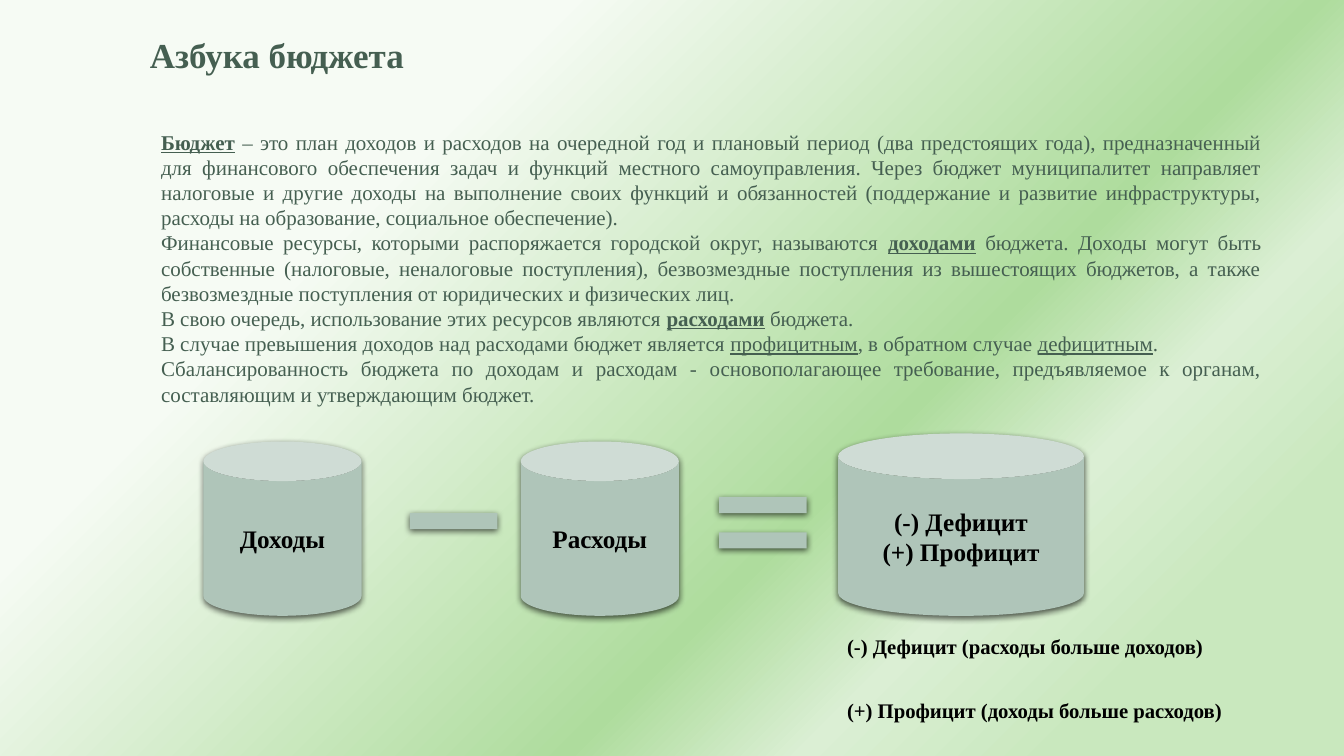
from lxml import etree
from pptx import Presentation
from pptx import util as u
from pptx.dml import color as c
from pptx.enum import shapes as s, text as t
from pptx.oxml import ns

Pt = u.Pt
HUES = {"ink": "455F51", "black": "000000", "can": "AFC5B9"}
STOPS = [(27, "F6FBF4"), (63, "AEDC9D"), (74, "DBEFD4"), (86, "C9E8BE")]
FONT = "Times New Roman"
# Each paragraph is a list of (words, style): b is bold, u is underlined
BODY = [
    [("Бюджет", "bu"),
     (" – это план доходов и расходов на очередной год и плановый период "
      "(два предстоящих года), предназначенный для финансового обеспечения "
      "задач и функций местного самоуправления. Через бюджет муниципалитет "
      "направляет налоговые и другие доходы на выполнение своих функций и "
      "обязанностей (поддержание и развитие инфраструктуры, расходы на "
      "образование, социальное обеспечение).", "")],
    [("Финансовые ресурсы, которыми распоряжается городской округ, "
      "называются ", ""), ("доходами", "bu"),
     (" бюджета. Доходы могут быть собственные (налоговые, неналоговые "
      "поступления), безвозмездные поступления из вышестоящих бюджетов, а "
      "также безвозмездные поступления от юридических и физических лиц.", "")],
    [("В свою очередь, использование этих ресурсов являются ", ""),
     ("расходами", "bu"), (" бюджета.", "")],
    [("В случае превышения доходов над расходами бюджет является ", ""),
     ("профицитным", "u"), (", в обратном случае ", ""),
     ("дефицитным", "u"), (".", "")],
    [("Сбалансированность бюджета по доходам и расходам - основополагающее "
      "требование, предъявляемое к органам, составляющим и утверждающим "
      "бюджет.", "")],
]


def style(font, size, hue, bold=None):
    font.name, font.size, font.bold = FONT, Pt(size), bold
    font.color.rgb = c.RGBColor.from_string(HUES[hue])


def frame(slide, box):
    tf = slide.shapes.add_textbox(*map(Pt, box)).text_frame
    tf.word_wrap = True
    return tf


def lines(tf, rows, size, hue):
    """Put one bold paragraph per row and return the paragraphs."""
    tf.text = "\n".join(rows)
    for p in tf.paragraphs:
        style(p.font, size, hue, True)
    return tf.paragraphs


def backdrop(slide):
    fill = slide.background.fill
    fill.gradient()
    fill.gradient_angle = -45 % 360
    grad = slide.element.find(".//" + ns.qn("a:gsLst"))
    for old in list(grad):
        grad.remove(old)
    for pos, hue in STOPS:
        stop = etree.SubElement(grad, ns.qn("a:gs"), pos=str(pos * 1000))
        etree.SubElement(stop, ns.qn("a:srgbClr"), val=hue)


def title(slide, box):
    tf = frame(slide, box)
    tf.vertical_anchor = t.MSO_ANCHOR.MIDDLE
    lines(tf, ["Азбука бюджета"], 25, "ink")[0].line_spacing = 0.9


def body(slide, box):
    tf = frame(slide, box)
    for i, parts in enumerate(BODY):
        p = tf.add_paragraph() if i else tf.paragraphs[0]
        p.alignment = t.PP_ALIGN.JUSTIFY
        style(p.font, 15, "ink")
        for words, marks in parts:
            r = p.add_run()
            r.text = words
            if "b" in marks:
                r.font.bold = True
            if "u" in marks:
                r.font.underline = True


def solid(slide, kind, box):
    """Add a filled shape with a soft shadow below it."""
    shape = slide.shapes.add_shape(kind, *map(Pt, box))
    shape.fill.solid()
    shape.fill.fore_color.rgb = c.RGBColor.from_string(HUES["can"])
    shape.line.fill.background()
    shape.shadow.inherit = False
    glow = etree.SubElement(
        shape.element.spPr.find(ns.qn("a:effectLst")), ns.qn("a:outerShdw"),
        blurRad=str(Pt(4.5)), dist=str(Pt(1.5)), dir="5400000", rotWithShape="0")
    hue = etree.SubElement(glow, ns.qn("a:srgbClr"), val=HUES["black"])
    etree.SubElement(hue, ns.qn("a:alpha"), val="63000")
    return shape


def can(slide, box, rows):
    tf = solid(slide, s.MSO_SHAPE.CAN, box).text_frame
    tf.word_wrap = True
    tf.vertical_anchor = t.MSO_ANCHOR.MIDDLE
    for p in lines(tf, rows, 18, "black"):
        p.alignment = t.PP_ALIGN.CENTER


def sums(slide, box):
    """Income minus spending equals the balance."""
    x, y, w, h = box
    top, wide = y + 5.8, 113
    can(slide, (x, top, wide, h - 5.8), ["Доходы"])
    can(slide, (x + 226.8, top, wide, h - 5.8), ["Расходы"])
    can(slide, (x + w - 175.7, y, 175.7, h), ["(-) Дефицит", "(+) Профицит"])
    # Minus sign, then the two bars of the equals sign
    for dx, dy in [(147.6, 56.9), (368.6, 45.4), (368.6, 70.6)]:
        solid(slide, s.MSO_SHAPE.RECTANGLE, (x + dx, y + dy, 62.6, 11.5))


def legend(slide, box):
    rows = ["(-) Дефицит (расходы больше доходов)",
            "(+) Профицит (доходы больше расходов)"]
    first, last = lines(frame(slide, box), rows, 14.8, "black")
    first.line_spacing = last.line_spacing = 0.7
    last.space_before = Pt(33)


def main():
    prs = Presentation()
    prs.slide_width, prs.slide_height = Pt(960.5), Pt(540)
    slide = prs.slides.add_slide(prs.slide_layouts[6])
    backdrop(slide)
    title(slide, (100.1, 21.6, 812.2, 38.9))
    legend(slide, (598.3, 454.3, 306.7, 70.6))
    body(slide, (108, 88.6, 800.6, 207.4))
    sums(slide, (145.4, 309.6, 629.3, 130.3))
    prs.save("out.pptx")


if __name__ == "__main__":
    main()
